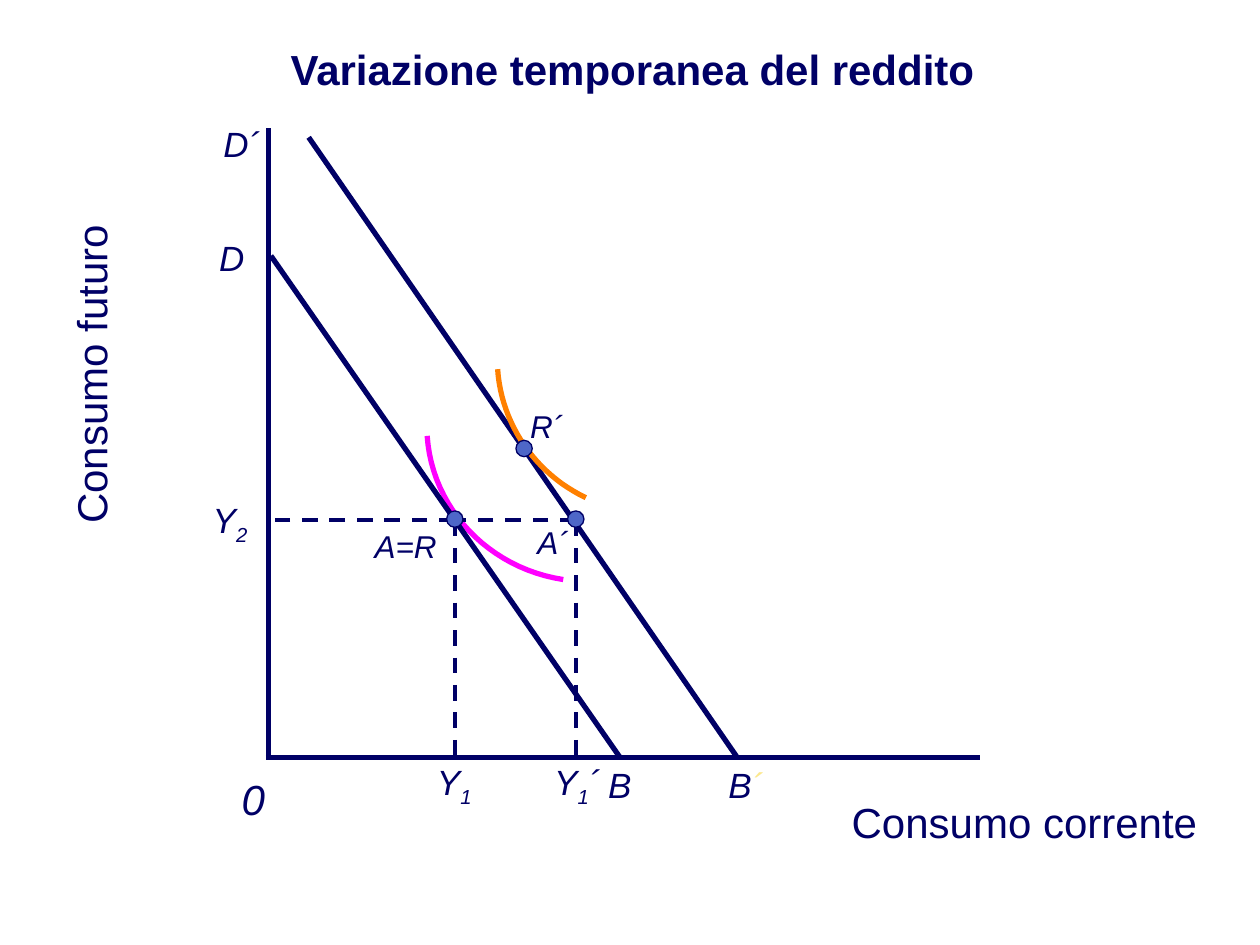
from pptx import Presentation
from pptx.dml.color import RGBColor
from pptx.enum import dml, shapes, text
from pptx.oxml import parse_xml
from pptx.oxml.ns import nsdecls
from pptx.util import Inches, Pt

NAVY, BLUE, PINK, ORANGE, PALE = "000066", "4E67C8", "FF00FF", "FF8000", "FCE78C"
LEFT, MID = text.PP_ALIGN.LEFT, text.PP_ALIGN.CENTER


def color(code):
    return RGBColor.from_string(code)


def label(slide, x, y, w, h, runs, size, align=MID, italic=False, bold=False):
    """Add a text box; each run is (words, options), with options sub and tint."""
    box = slide.shapes.add_textbox(Inches(x), Inches(y), Inches(w), Inches(h))
    frame = box.text_frame
    frame.word_wrap = True
    frame.vertical_anchor = text.MSO_ANCHOR.MIDDLE
    para = frame.paragraphs[0]
    para.alignment = align
    font = para.font
    font.name, font.size = "Arial", Pt(size)
    font.italic, font.bold = italic, bold
    font.color.rgb = color(NAVY)
    for words, opts in runs:
        run = para.add_run()
        run.text = words
        if "sub" in opts:
            run._r.get_or_add_rPr().set("baseline", "-25000")
        if "tint" in opts:
            run.font.color.rgb = color(opts["tint"])
    return box


def line(slide, start, end, width=3, dash=False):
    ends = [Inches(n) for n in (*start, *end)]
    link = slide.shapes.add_connector(shapes.MSO_CONNECTOR.STRAIGHT, *ends)
    link.line.color.rgb = color(NAVY)
    link.line.width = Pt(width)
    if dash:
        link.line.dash_style = dml.MSO_LINE.DASH
    link._element.spPr.append(parse_xml(f"<a:effectLst {nsdecls('a')}/>"))


def curve(slide, knots, tint, steps=24):
    """Draw a cubic Bezier curve through short segments."""
    def spot(t):
        parts = ((1 - t) ** 3, 3 * t * (1 - t) ** 2, 3 * t * t * (1 - t), t ** 3)
        return tuple(Inches(sum(p * k[i] for p, k in zip(parts, knots)))
                     for i in (0, 1))

    dots = [spot(n / steps) for n in range(steps + 1)]
    build = slide.shapes.build_freeform(*dots[0])
    build.add_line_segments(dots[1:], close=False)
    arc = build.convert_to_shape()
    arc.shadow.inherit = False
    arc.fill.background()
    arc.line.color.rgb = color(tint)
    arc.line.width = Pt(3)


def point(slide, x, y, size=0.13):
    dot = slide.shapes.add_shape(
        shapes.MSO_SHAPE.OVAL, Inches(x - size / 2), Inches(y - size / 2),
        Inches(size), Inches(size))
    dot.shadow.inherit = False
    dot.fill.solid()
    dot.fill.fore_color.rgb = color(BLUE)
    dot.line.color.rgb = color(NAVY)
    dot.line.width = Pt(0.75)


def graph(slide, left, top, wide, high):
    """Draw axes, budget lines, indifference curves and labels in the box."""
    def at(x, y):
        return left + x, top + y

    def arc(knots, tint):
        curve(slide, [at(*k) for k in knots], tint)

    arc([(1.26, 2.44), (1.3, 3.02), (1.75, 3.49), (2.34, 3.58)], PINK)
    line(slide, at(0, 0), at(0, high))
    line(slide, at(-0.02, high), at(wide, high))
    for start, end in [((3.72, high), (0.32, 0.07)), ((2.79, high), (0.02, 1.01))]:
        line(slide, at(*start), at(*end))

    level, now, later = 3.11, 1.48, 2.44
    for start, end in [((now, level), (0, level)), ((later, level), (1.5, level)),
                       ((now, level), (now, high)), ((later, level), (later, high))]:
        line(slide, at(*start), at(*end), 2.25, True)
    arc([(1.82, 1.91), (1.85, 2.35), (2.12, 2.74), (2.52, 2.93)], ORANGE)
    for spot in [(now, 3.1), (later, 3.1), (2.03, 2.54)]:
        point(slide, *at(*spot))

    sub = {"sub": True}
    for x, y, w, size, align, runs in [
        (-0.5, -0.1, 0.58, 20, MID, [("D´", {})]),
        (-0.58, 0.81, 0.58, 20, MID, [("D", {})]),
        (-0.54, 2.91, 0.63, 20, LEFT, [("Y", {}), ("2", sub)]),
        (1.24, high, 0.63, 20, LEFT, [("Y", {}), ("1", sub)]),
        (2.17, high, 0.75, 20, LEFT, [("Y", {}), ("1", sub), ("´", {})]),
        (2.5, high, 0.58, 20, MID, [("B", {})]),
        (3.5, high, 0.58, 20, MID, [("B", {}), ("´", {"tint": PALE})]),
        (0.39, 3.11, 1.4, 18, MID, [("A=R", {})]),
        (1.97, 3.08, 0.58, 18, MID, [("A´", {})]),
        (1.92, 2.16, 0.58, 18, MID, [("R´", {})]),
        (-0.41, high + 0.08, 0.58, 24, MID, [("0", {})]),
    ]:
        tall = 0.1 + size / 60
        label(slide, *at(x, y), w, tall, runs, size, align, italic=True)

    side = label(slide, *at(-3.28, 1.7), 3.74, 0.5, [("Consumo futuro", {})], 24)
    side.rotation = 270
    label(slide, *at(4.25, high + 0.26), 3.5, 0.5, [("Consumo corrente", {})], 24)


def main():
    deck = Presentation()
    deck.slide_width, deck.slide_height = Inches(10), Inches(7.5)
    slide = deck.slides.add_slide(deck.slide_layouts[6])
    label(slide, 0.04, 0.21, 9.96, 0.67,
          [("Variazione temporanea del reddito", {})], 24, bold=True)
    graph(slide, 2.13, 1.02, 5.65, 4.99)
    deck.save("out.pptx")


if __name__ == "__main__":
    main()
